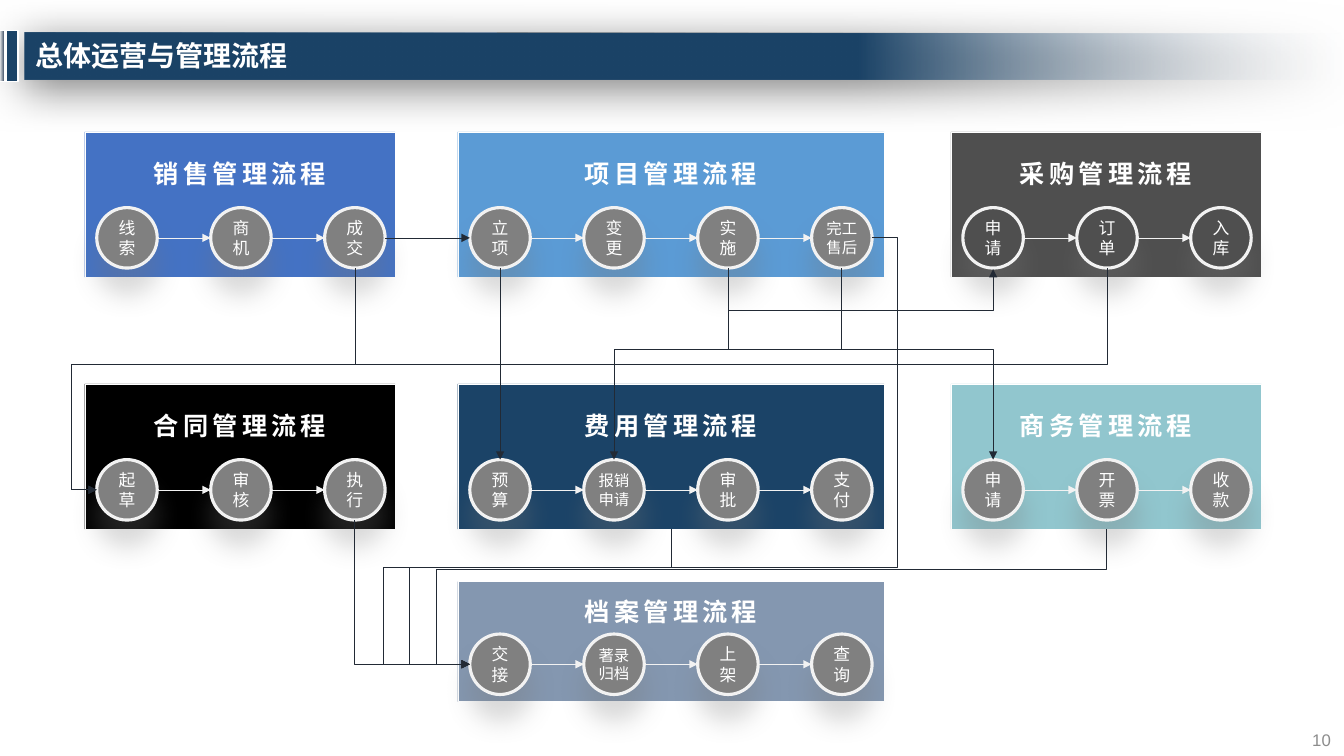
"""Build the overview slide of operating and management processes."""
from lxml import etree
from pptx import Presentation
from pptx.dml.color import RGBColor
from pptx.enum.shapes import MSO_CONNECTOR, MSO_SHAPE
from pptx.enum.text import MSO_ANCHOR, PP_ALIGN
from pptx.oxml.ns import qn
from pptx.util import Inches, Pt

STRAIGHT, ELBOW = MSO_CONNECTOR.STRAIGHT, MSO_CONNECTOR.ELBOW
RECTANGLE, OVAL = MSO_SHAPE.RECTANGLE, MSO_SHAPE.OVAL
MIDDLE, TOP = MSO_ANCHOR.MIDDLE, MSO_ANCHOR.TOP
LEFT, CENTER, RIGHT = PP_ALIGN.LEFT, PP_ALIGN.CENTER, PP_ALIGN.RIGHT

CJK, LATIN = "Noto Sans CJK SC", "Arial"
WHITE, PALE, NAVY, INK, GREY = "FFFFFF", "F2F2F2", "1B4367", "222A35", "808080"
COLUMNS = (0.84, 4.54, 9.43)
ROWS = (1.31, 3.81, 5.77)
PANEL_WIDTHS = {3: 3.08, 4: 4.23}
STEP_SIZE, STEP_PITCH, STEP_INSET = 0.6, 1.13, 0.12

PROCESSES = (
    ("销售管理流程", 0, 0, "4472C4", GREY, ("线索", "商机", "成交")),
    ("项目管理流程", 1, 0, "5B9BD5", GREY, ("立项", "变更", "实施", "完工售后")),
    ("费用管理流程", 1, 1, NAVY, GREY, ("预算", "报销申请", "审批", "支付")),
    ("采购管理流程", 2, 0, "4F4F4F", "4F4F4F", ("申请", "订单", "入库")),
    ("商务管理流程", 2, 1, "91C6CE", GREY, ("申请", "开票", "收款")),
    ("合同管理流程", 0, 1, "000000", GREY, ("起草", "审核", "执行")),
    ("档案管理流程", 1, 2, "8497B0", GREY, ("交接", "著录归档", "上架", "查询")),
)


def rgb(value):
    """Turn a hex string into a colour."""
    return RGBColor.from_string(value)


def add_child(parent, tag, **attributes):
    """Append a DrawingML element to a parent."""
    child = etree.SubElement(parent, qn(tag))
    for name, value in attributes.items():
        child.set(name, str(value))
    return child


def write(shape, text, size, color=WHITE, font=CJK, bold=False, spacing=0,
          align=CENTER, leading=1.0, anchor=MIDDLE, wrap=True,
          insets=(0.1, 0.05, 0.1, 0.05)):
    """Fill a shape with one formatted paragraph."""
    frame = shape.text_frame
    sides = ("margin_left", "margin_top", "margin_right", "margin_bottom")
    frame_format = dict(zip(sides, map(Inches, insets)))
    frame_format |= {"word_wrap": wrap, "vertical_anchor": anchor}
    paragraph = frame.paragraphs[0]
    run = paragraph.add_run()
    formats = (
        (frame, frame_format),
        (paragraph, {"alignment": align, "line_spacing": leading}),
        (run, {"text": text}),
        (run.font, {"size": Pt(size), "bold": bold, "name": font}),
    )
    for target, values in formats:
        for name, value in values.items():
            setattr(target, name, value)
    run.font.color.rgb = rgb(color)
    properties = run.font._element
    if spacing:
        properties.set("spc", str(spacing * 100))
    add_child(properties, "a:ea", typeface=font)


def add_shadow(shape, color, opacity, blur, distance, angle):
    """Give a shape an outer shadow."""
    effects = shape._element.spPr.find(qn("a:effectLst"))
    shadow = add_child(effects, "a:outerShdw", blurRad=Pt(blur), dist=Pt(distance),
                       dir=angle * 60000, algn="ctr", rotWithShape=0)
    shade = add_child(shadow, "a:srgbClr", val=color)
    add_child(shade, "a:alpha", val=opacity * 1000)


def add_block(slide, kind, box, fill, outline, width):
    """Draw a filled preset shape with an outline."""
    block = slide.shapes.add_shape(kind, *map(Inches, box))
    block.shadow.inherit = False
    block.fill.solid()
    block.fill.fore_color.rgb = rgb(fill)
    block.line.color.rgb = rgb(outline)
    block.line.width = Pt(width)
    return block


def set_gradient(shape, *stops):
    """Fill a shape from left to right with two colour stops."""
    shape.fill.gradient()
    shape.fill.gradient_angle = 0
    for stop, (position, color) in zip(shape.fill.gradient_stops, stops):
        stop.position = position
        stop.color.rgb = rgb(color)


def finish_connector(connector, color, arrow):
    """Style a connector and give it an arrowhead if wanted."""
    connector.line.color.rgb = rgb(color)
    connector.line.width = Pt(0.5)
    properties = connector._element.spPr
    if arrow:
        add_child(properties.find(qn("a:ln")), "a:tailEnd", type="triangle")
    add_child(properties, "a:effectLst")


def add_straight(slide, start, end, color=INK, arrow=True):
    """Draw a straight line between two points."""
    line = slide.shapes.add_connector(STRAIGHT, *map(Inches, (*start, *end)))
    finish_connector(line, color, arrow)


def add_elbow(slide, start, end, bends=(), down=True):
    """Draw an elbow arrow whose bends alternate between the two axes."""
    spans = [end[0] - start[0], end[1] - start[1]]
    center = [(a + b) / 2 for a, b in zip(start, end)]
    size = [abs(span) for span in spans]
    if down:
        size.reverse()
    corner = [c - s / 2 for c, s in zip(center, size)]
    far = [c + s / 2 for c, s in zip(center, size)]
    elbow = slide.shapes.add_connector(ELBOW, *map(Inches, corner + far))
    properties = elbow._element.spPr
    frame = properties.find(qn("a:xfrm"))
    rightward = spans[0] > 0
    if down:
        frame.set("rot", str((270 if rightward else 90) * 60000))
    if rightward == down:
        frame.set("flipH", "1")
    geometry = properties.find(qn("a:prstGeom"))
    geometry.set("prst", f"bentConnector{len(bends) + 2}")
    guides = geometry.find(qn("a:avLst"))
    for number, bend in enumerate(bends, 1):
        axis = (number + down + 1) % 2
        ratio = (bend - start[axis]) / spans[axis]
        add_child(guides, "a:gd", name=f"adj{number}" if bends[1:] else "adj1",
                  fmla=f"val {round(ratio * 100000)}")
    finish_connector(elbow, INK, True)


def port(shape, side):
    """Return the middle of one side of a shape in inches."""
    x, y = {"top": (0.5, 0), "left": (0, 0.5), "bottom": (0.5, 1), "right": (1, 0.5)}[side]
    return (shape.left + shape.width * x) / Inches(1), (shape.top + shape.height * y) / Inches(1)


def add_process(slide, title, column, row, fill, step_fill, names):
    """Draw a process panel with its chain of steps; return panel and steps."""
    archive = row == 2
    left, top = COLUMNS[column], ROWS[row]
    box = (left, top, PANEL_WIDTHS[len(names)], 1.19 if archive else 1.44)
    panel = add_block(slide, RECTANGLE, box, fill, WHITE, 0.25)
    write(panel, title, 18, bold=True, spacing=3, leading=1.5, anchor=TOP, wrap=False,
          insets=(0.23, 0 if archive else 0.11, 0.23, 0.11))
    steps = []
    for index, name in enumerate(names):
        box = (left + STEP_INSET + index * STEP_PITCH, top + (0.52 if archive else 0.75),
               STEP_SIZE, STEP_SIZE)
        step = add_block(slide, OVAL, box, step_fill, PALE, 2.25)
        add_shadow(step, "777777", 28, 18, 18, 90)
        write(step, name, 11 if len(name) > 2 else 12, insets=(0.05, 0.03, 0.05, 0.03))
        steps.append(step)
    for before, after in zip(steps, steps[1:]):
        add_straight(slide, port(before, "right"), port(after, "left"), PALE)
    return panel, steps


def add_header(slide):
    """Draw the title band, its side bars and the page number."""
    builder = slide.shapes.build_freeform(Inches(0.24), Inches(0.32))
    corners = ((13.35, 0.33), (13.34, 0.79), (0.24, 0.79))
    builder.add_line_segments([tuple(map(Inches, corner)) for corner in corners])
    band = builder.convert_to_shape()
    band.shadow.inherit = False
    band.line.fill.background()
    set_gradient(band, (0.63, NAVY), (1, "F6F8FC"))
    clear = band._element.spPr.findall(".//" + qn("a:srgbClr"))[-1]
    add_child(clear, "a:alpha", val=0)
    add_shadow(band, "000000", 50, 31, 6, 97)
    add_block(slide, RECTANGLE, (0.06, 0.3, 0.12, 0.51), NAVY, WHITE, 1)
    edge = add_block(slide, RECTANGLE, (-0.01, 0.3, 0.06, 0.51), PALE, WHITE, 1)
    set_gradient(edge, (0.12, PALE), (0.87, "44546A"))
    title = slide.shapes.add_textbox(*map(Inches, (0.25, 0.34, 12.2, 0.46)))
    write(title, "总体运营与管理流程", 20, bold=True, align=LEFT, leading=0.9)
    page = slide.shapes.add_textbox(*map(Inches, (12.65, 7.17, 0.68, 0.34)))
    write(page, "10", 12, "8C8C8C", LATIN, align=RIGHT, insets=(0.13, 0.07, 0.13, 0.07))


def add_flows(slide, panels, steps):
    """Link the processes with each other."""
    sales, project, expense, purchase, business, contract, archive = steps
    draft, handover = port(contract[0], "left"), port(archive[0], "left")
    request_x, request_y = port(purchase[0], "bottom")
    add_straight(slide, port(sales[2], "right"), port(project[0], "left"))
    add_straight(slide, port(project[0], "bottom"), port(expense[0], "top"))
    add_straight(slide, (7.16, 3.47), (8.4, 3.47), arrow=False)
    routes = (
        (port(sales[2], "bottom"), draft, (3.61, 0.71)),
        (port(project[2], "bottom"), (request_x, request_y + 0.01), (3.09,)),
        (port(purchase[1], "bottom"), draft, (3.61, 0.71)),
        (port(project[2], "bottom"), port(expense[1], "top"), (3.47,)),
        (port(project[3], "bottom"), port(business[0], "top"), (3.47,)),
        (port(contract[2], "bottom"), handover, ()),
        (port(panels[2], "bottom"), handover, (5.63, 4.06)),
        (port(panels[4], "bottom"), handover, (5.65, 4.33)),
    )
    for start, end, bends in routes:
        add_elbow(slide, start, end, bends)
    add_elbow(slide, port(project[3], "right"), handover, (8.9, 5.63, 3.8), down=False)


def main():
    """Build and save the slide."""
    deck = Presentation()
    deck.slide_width, deck.slide_height = Inches(13.33), Inches(7.5)
    slide = deck.slides.add_slide(deck.slide_layouts[6])
    add_header(slide)
    panels, steps = zip(*(add_process(slide, *process) for process in PROCESSES))
    add_flows(slide, panels, steps)
    deck.save("out.pptx")


if __name__ == "__main__":
    main()
